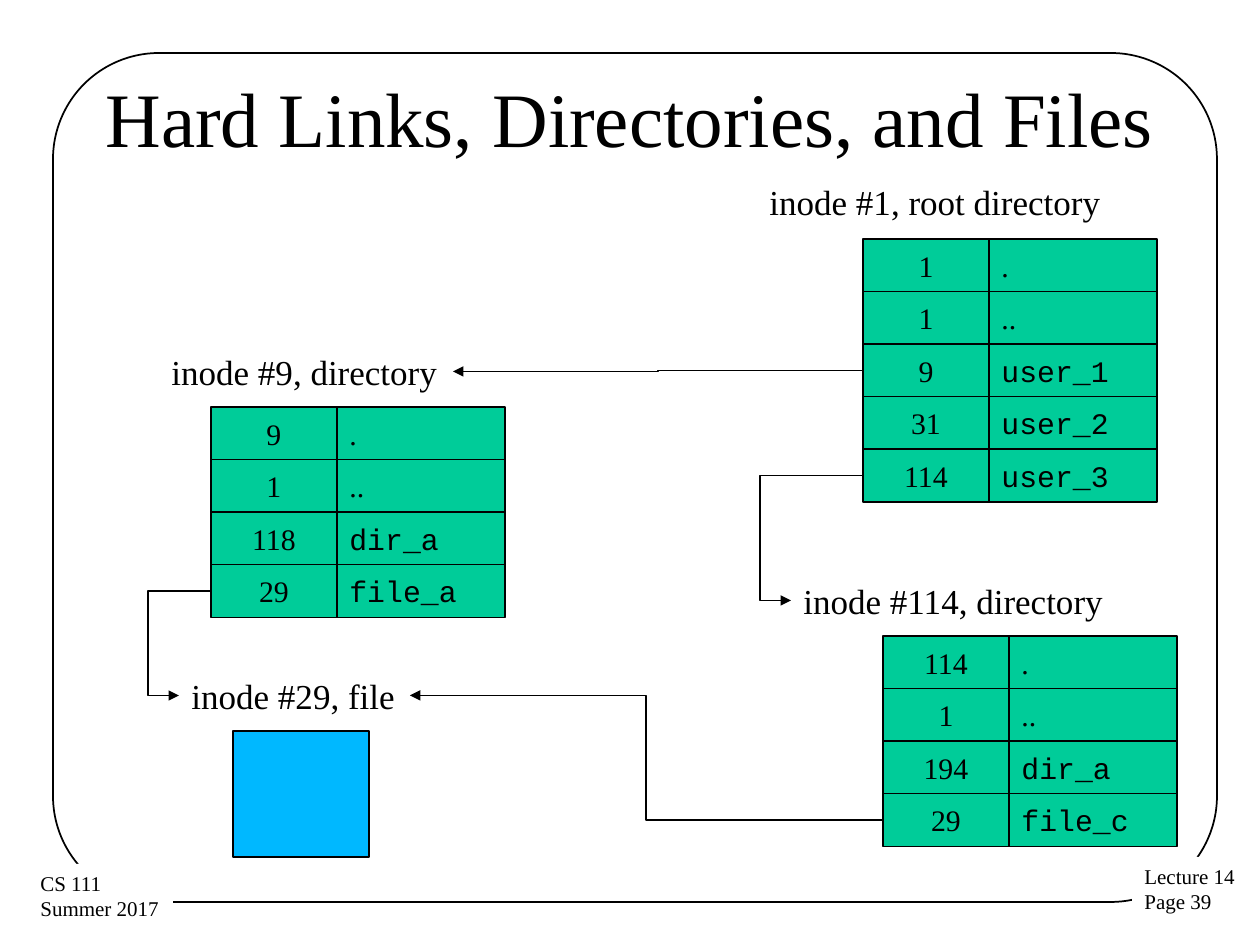
from lxml.etree import SubElement
from pptx import Presentation
from pptx.dml.color import RGBColor
from pptx.enum.shapes import MSO_CONNECTOR as LINK, MSO_SHAPE as SHAPE
from pptx.enum.text import MSO_ANCHOR as ANCHOR, MSO_AUTO_SIZE as FIT, PP_ALIGN as ALIGN
from pptx.oxml.ns import qn
from pptx.util import Pt

BLACK = RGBColor(0x00, 0x00, 0x00)
WHITE = RGBColor(0xFF, 0xFF, 0xFF)
GREEN = RGBColor(0x00, 0xCC, 0x99)
BLUE = RGBColor(0x00, 0xB8, 0xFF)

SERIF = "Times New Roman"
MONO = "Courier New"

SCALE = 914400 / 126  # EMU per px
NUM_W, NAME_W = 126, 168
ROW_H, TWO_ROWS = 53, 105
LABEL_H = 55
LEFT, RIGHT = 1, 3  # connection sites


def px(*sizes):
    return [round(size * SCALE) for size in sizes]


def write(shape, text, size, font=SERIF, align=ALIGN.LEFT, wrap=False):
    frame = shape.text_frame
    frame.word_wrap = wrap
    frame.text = text
    for para in frame.paragraphs:
        para.alignment = align
        para.font.size = Pt(size)
        para.font.name = font
        para.font.color.rgb = BLACK
    return frame


def add_box(slide, box, fill=None, line=None, kind=SHAPE.RECTANGLE):
    shape = slide.shapes.add_shape(kind, *px(*box))
    shape.shadow.inherit = False
    if fill is None:
        shape.fill.background()
    else:
        shape.fill.solid()
        shape.fill.fore_color.rgb = fill
    if line is None:
        shape.line.fill.background()
    else:
        shape.line.color.rgb = BLACK
        shape.line.width = Pt(line)
    return shape


def add_note(slide, text, box):
    frame = write(add_box(slide, box, WHITE), text, 12)
    frame.vertical_anchor = ANCHOR.TOP
    frame.auto_size = FIT.SHAPE_TO_FIT_TEXT


def add_title(slide, text):
    shape = slide.shapes.add_textbox(*px(63, 38, 1134, 157))
    frame = write(shape, text, 44, align=ALIGN.CENTER, wrap=True)
    frame.vertical_anchor = ANCHOR.MIDDLE


def add_label(slide, text, x, y, width):
    shape = slide.shapes.add_textbox(*px(x, y, width, LABEL_H))
    write(shape, text, 20).auto_size = FIT.SHAPE_TO_FIT_TEXT
    return shape


def add_cell(slide, text, box, font=SERIF, align=ALIGN.LEFT):
    shape = add_box(slide, box, GREEN, 0.75)
    write(shape, text, 17, font, align).vertical_anchor = ANCHOR.MIDDLE
    return shape


def add_dir(slide, x, y, rows):
    """Draw a directory and return its inode cells, top to bottom."""
    cells = []
    for i, (num, name) in enumerate(rows):
        top = y + i * TWO_ROWS / 2
        font = SERIF if name in (".", "..") else MONO
        add_cell(slide, name, (x + NUM_W, top, NAME_W, ROW_H), font)
        cells.append(add_cell(slide, str(num), (x, top, NUM_W, ROW_H),
                              align=ALIGN.CENTER))
    return cells


def add_link(slide, cell, label, side, bend):
    """Lead an elbow arrow from a cell to a label, turning at x = bend."""
    link = slide.shapes.add_connector(LINK.ELBOW, 0, 0, 0, 0)
    link.begin_connect(cell, LEFT)
    link.end_connect(label, side)
    link.line.color.rgb = BLACK
    link.line.width = Pt(0.75)

    start, end = link.begin_x, link.end_x
    ratio = (start - bend * SCALE) / (start - end)
    props = link._element.spPr
    guides = props.find(qn("a:prstGeom")).get_or_add_avLst()
    SubElement(guides, qn("a:gd"), name="adj1",
               fmla=f"val {round(ratio * 100000)}")
    SubElement(props.find(qn("a:ln")), qn("a:tailEnd"), type="triangle")
    SubElement(props, qn("a:effectLst"))


def main():
    deck = Presentation()
    deck.slide_width, deck.slide_height = px(1260, 945)
    slide = deck.slides.add_slide(deck.slide_layouts[6])

    # Frame, footers and title
    border = add_box(slide, (53, 53, 1164, 849), line=1,
                     kind=SHAPE.ROUNDED_RECTANGLE)
    border.adjustments[0] = 0.125
    add_note(slide, "Lecture 14\nPage 39", (1132, 857, 117, 64))
    add_note(slide, "CS 111\nSummer 2017", (28, 864, 145, 64))
    add_title(slide, "Hard Links, Directories, and Files")

    # Directories
    root = add_dir(slide, 863, 239, [
        (1, "."), (1, ".."), (9, "user_1"), (31, "user_2"), (114, "user_3")])
    user1 = add_dir(slide, 211, 407, [
        (9, "."), (1, ".."), (118, "dir_a"), (29, "file_a")])
    user3 = add_dir(slide, 883, 636, [
        (114, "."), (1, ".."), (194, "dir_a"), (29, "file_c")])

    # Shared file
    add_box(slide, (233, 731, 136, 126), BLUE, 0.75)

    # Labels
    add_label(slide, "inode #1, root directory", 757, 174, 359)
    inode9 = add_label(slide, "inode #9, directory", 159, 344, 294)
    inode114 = add_label(slide, "inode #114, directory", 791, 573, 328)
    inode29 = add_label(slide, "inode #29, file", 179, 668, 231)

    # Links from entries to inodes
    add_link(slide, root[2], inode9, RIGHT, 658)
    add_link(slide, root[4], inode114, LEFT, 760)
    add_link(slide, user1[3], inode29, LEFT, 148)
    add_link(slide, user3[3], inode29, RIGHT, 646)

    deck.save("out.pptx")


if __name__ == "__main__":
    main()
